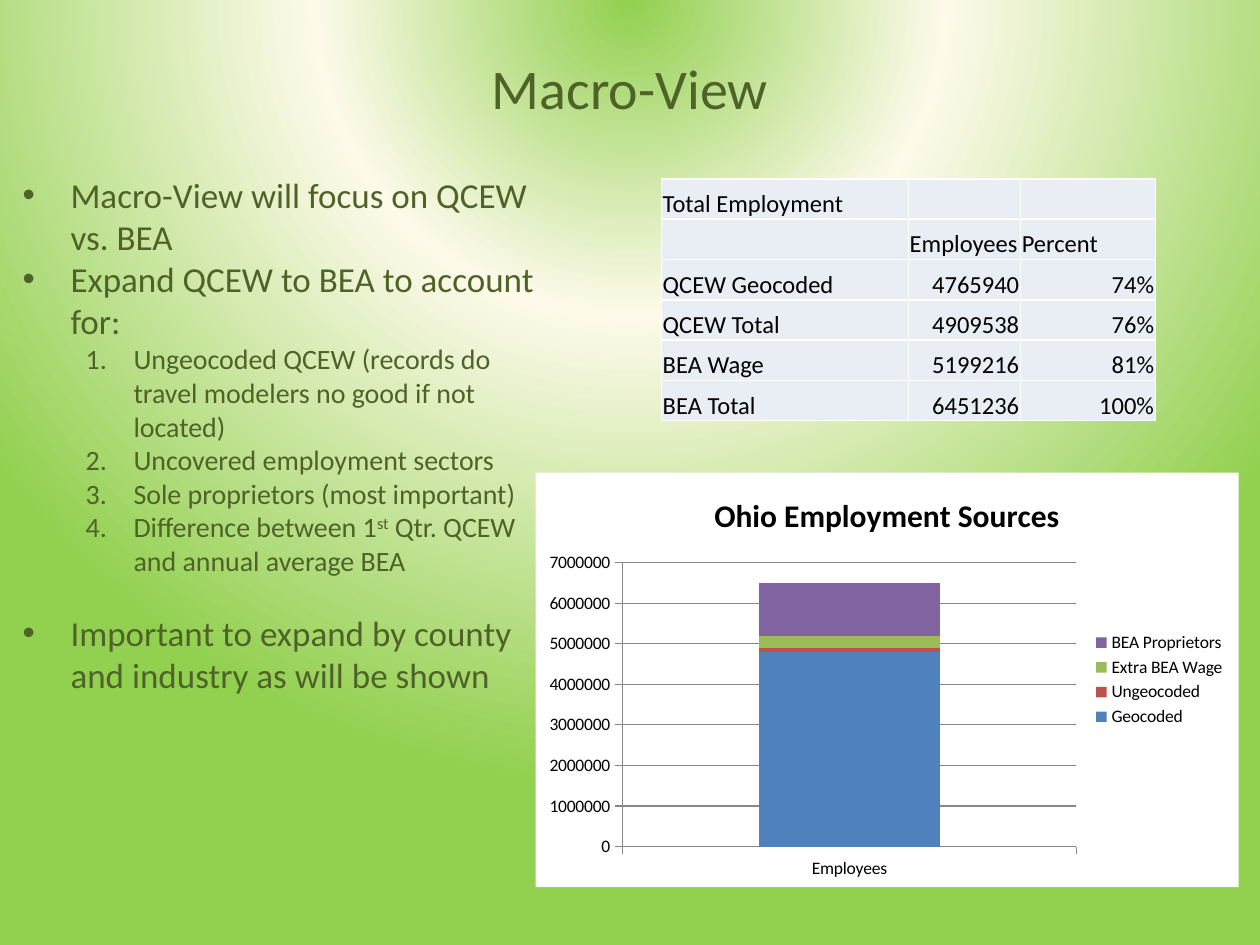
import pptx
import pptx.chart.data
import pptx.dml.color
import pptx.enum.chart
import pptx.enum.text
import pptx.oxml
import pptx.oxml.ns
import pptx.util

Inches = pptx.util.Inches
Pt = pptx.util.Pt
Align = pptx.enum.text.PP_ALIGN
Anchor = pptx.enum.text.MSO_ANCHOR
qn = pptx.oxml.ns.qn

FONT = "Calibri"
OLIVE, BLACK, WHITE, GREY = "4F6228", "000000", "FFFFFF", "868686"
SPACE = pptx.oxml.ns.nsdecls("a", "c")

POINTS = [
    (0, "Macro-View will focus on QCEW vs. BEA"),
    (0, "Expand QCEW to BEA to account for:"),
    (1, "Ungeocoded QCEW (records do travel modelers no good if not located)"),
    (1, "Uncovered employment sectors"),
    (1, "Sole proprietors (most important)"),
    (1, "Difference between 1^st^ Qtr. QCEW and annual average BEA"),
    (0, "Important to expand by county and industry as will be shown"),
]
ROWS = [
    ("Total Employment", "", ""),
    ("", "Employees", "Percent"),
    ("QCEW Geocoded", "4765940", "74%"),
    ("QCEW Total", "4909538", "76%"),
    ("BEA Wage", "5199216", "81%"),
    ("BEA Total", "6451236", "100%"),
]
SOURCES = [
    ("Geocoded", 4800000, "4F81BD"),
    ("Ungeocoded", 100000, "C0504D"),
    ("Extra BEA Wage", 300000, "9BBB59"),
    ("BEA Proprietors", 1300000, "8064A2"),
]


def color(code):
    return pptx.dml.color.RGBColor.from_string(code)


def node(text):
    tag, rest = text.split(" ", 1) if " " in text else (text, "")
    return pptx.oxml.parse_xml(f"<{tag} {SPACE} {rest}")


def paint(fill, code):
    fill.solid()
    fill.fore_color.rgb = color(code)


def style(font, size, code=BLACK, bold=False):
    font.name, font.size, font.bold = FONT, Pt(size), bold
    font.color.rgb = color(code)


def write(para, text, size=14, code=BLACK, bold=False, align=Align.LEFT):
    para.alignment = align
    for i, part in enumerate(text.split("^")):
        if part:
            run = para.add_run()
            run.text = part
            style(run.font, size, code, bold)
            if i % 2:
                run.font._element.set("baseline", "30000")


def place(shape, box):
    shape.left, shape.top, shape.width, shape.height = map(Inches, box)


def backdrop(slide):
    slide.background.fill.gradient()
    old = slide.element.find(".//" + qn("a:gradFill"))
    stops = "".join(
        f'<a:gs pos="{pos * 1000}"><a:srgbClr val="{code}"/></a:gs>'
        for pos, code in [(0, "92D050"), (40, "FDFAEA"), (100, "92D050")])
    new = node(
        f'a:gradFill rotWithShape="1"><a:gsLst>{stops}</a:gsLst>'
        '<a:path path="circle"><a:fillToRect l="50000" t="-80000" '
        'r="50000" b="180000"/></a:path></a:gradFill>')
    old.getparent().replace(old, new)


def heading(slide, box):
    shape = slide.shapes.title
    place(shape, box)
    frame = shape.text_frame
    frame.auto_size = pptx.enum.text.MSO_AUTO_SIZE.NONE
    write(frame.paragraphs[0], "Macro-View", size=32, code=OLIVE, align=Align.CENTER)


def bullets(slide, box):
    shape = slide.placeholders[1]
    place(shape, box)
    frame = shape.text_frame
    frame.auto_size = pptx.enum.text.MSO_AUTO_SIZE.NONE
    frame.vertical_anchor = Anchor.TOP
    last = 0
    for i, (level, text) in enumerate(POINTS):
        para = frame.add_paragraph() if i else frame.paragraphs[0]
        para.level = level
        para.space_before = Pt(19.5 if level < last else 0)
        write(para, text, size=16 if level else 20, code=OLIVE)
        props = para._p.get_or_add_pPr()
        props.set("marL", str(Inches(0.88 if level else 0.38)))
        props.set("indent", str(Inches(-0.38)))
        props.append(node('a:buFont typeface="+mj-lt"/>' if level
                          else 'a:buFont typeface="Arial"/>'))
        props.append(node('a:buAutoNum type="arabicPeriod"/>' if level
                          else 'a:buChar char="•"/>'))
        last = level


def border(cell):
    props = cell._tc.get_or_add_tcPr()
    for side in "LRTB":
        props.append(node(
            f'a:ln{side} w="12700"><a:solidFill><a:srgbClr val="{WHITE}"/>'
            f'</a:solidFill></a:ln{side}>'))


def table(slide, box):
    grid = slide.shapes.add_table(len(ROWS), 3, *map(Inches, box)).table
    grid.first_row = grid.horz_banding = False
    for col, width in zip(grid.columns, (1.96, 0.89, 1.07)):
        col.width = Inches(width)
    for r, row in enumerate(ROWS):
        grid.rows[r].height = Inches(box[3] / len(ROWS))
        for c, text in enumerate(row):
            cell = grid.cell(r, c)
            cell.vertical_anchor = Anchor.BOTTOM
            cell.margin_left = cell.margin_right = cell.margin_top = Inches(0.01)
            cell.margin_bottom = 0
            border(cell)
            paint(cell.fill, "E9EDF4")
            right = r > 1 and c > 0
            write(cell.text_frame.paragraphs[0], text,
                  align=Align.RIGHT if right else Align.LEFT)


def graph(slide, box):
    data = pptx.chart.data.CategoryChartData(number_format="General")
    data.categories = ["Employees"]
    for name, value, code in SOURCES:
        data.add_series(name, [value])
    kind = pptx.enum.chart.XL_CHART_TYPE.COLUMN_STACKED
    chart = slide.shapes.add_chart(kind, *map(Inches, box), data).chart
    style(chart.font, 10)
    chart._chartSpace.find(qn("c:txPr")).addprevious(node(
        f'c:spPr><a:solidFill><a:srgbClr val="{WHITE}"/></a:solidFill>'
        '<a:ln><a:noFill/></a:ln></c:spPr>'.replace("c:spPr>", "c:spPr >", 1)))
    chart.has_title = True
    write(chart.chart_title.text_frame.paragraphs[0], "Ohio Employment Sources",
          size=18, bold=True, align=Align.CENTER)
    chart.chart_title.include_in_layout = False
    chart.has_legend = True
    chart.legend.position = pptx.enum.chart.XL_LEGEND_POSITION.RIGHT
    chart.legend.include_in_layout = False
    plot = chart.plots[0]
    plot.gap_width, plot.overlap = 150, 100
    plot.vary_by_categories = False
    for item, (name, value, code) in zip(plot.series, SOURCES):
        paint(item.format.fill, code)
    chart.value_axis.has_major_gridlines = True
    for axis in (chart.category_axis, chart.value_axis):
        axis.major_tick_mark = pptx.enum.chart.XL_TICK_MARK.OUTSIDE
        paint(axis.format.line.fill, GREY)
    paint(chart.value_axis.major_gridlines.format.line.fill, GREY)


def main():
    deck = pptx.Presentation()
    deck.slide_width, deck.slide_height = Inches(10), Inches(7.5)
    slide = deck.slides.add_slide(deck.slide_layouts[1])
    backdrop(slide)
    heading(slide, (2.5, 0.37, 5, 0.64))
    bullets(slide, (0.08, 1.33, 4.42, 4.27))
    graph(slide, (4.25, 3.75, 5.58, 3.29))
    table(slide, (5.25, 1.42, 3.92, 1.92))
    deck.save("out.pptx")


if __name__ == "__main__":
    main()
